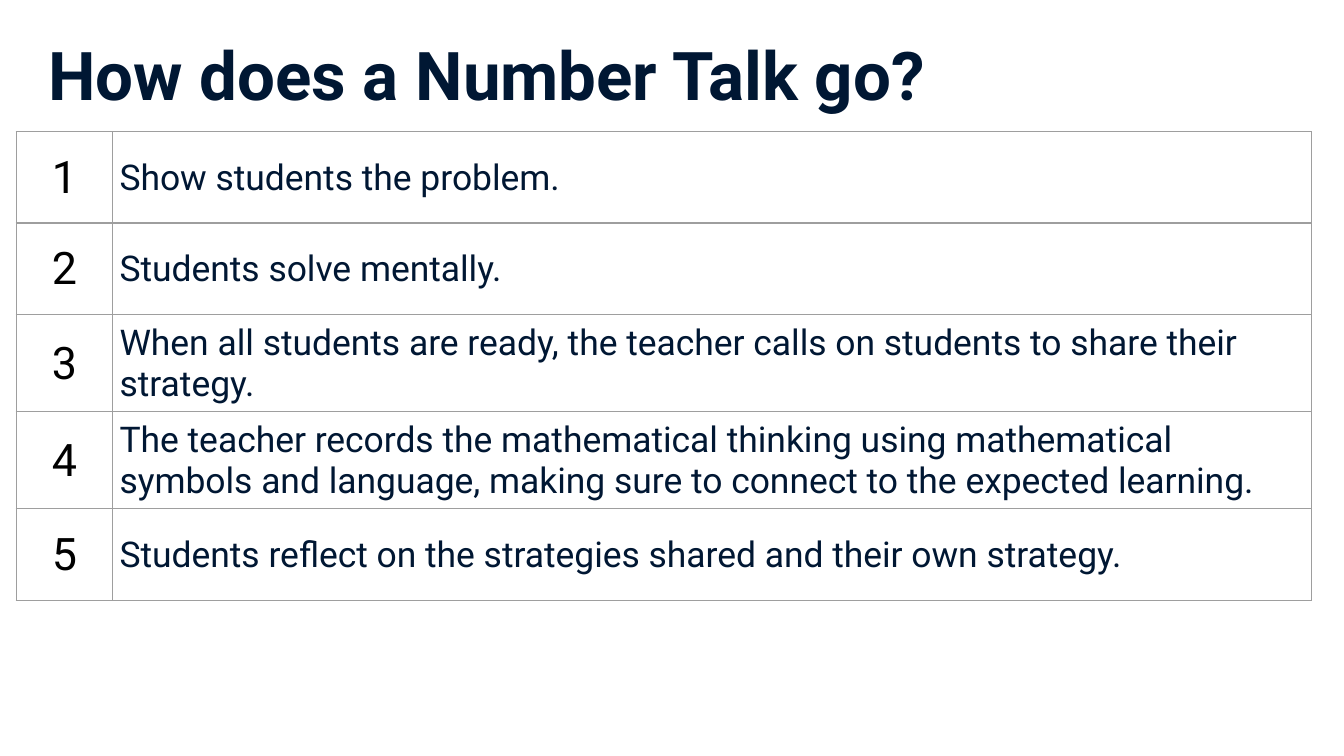
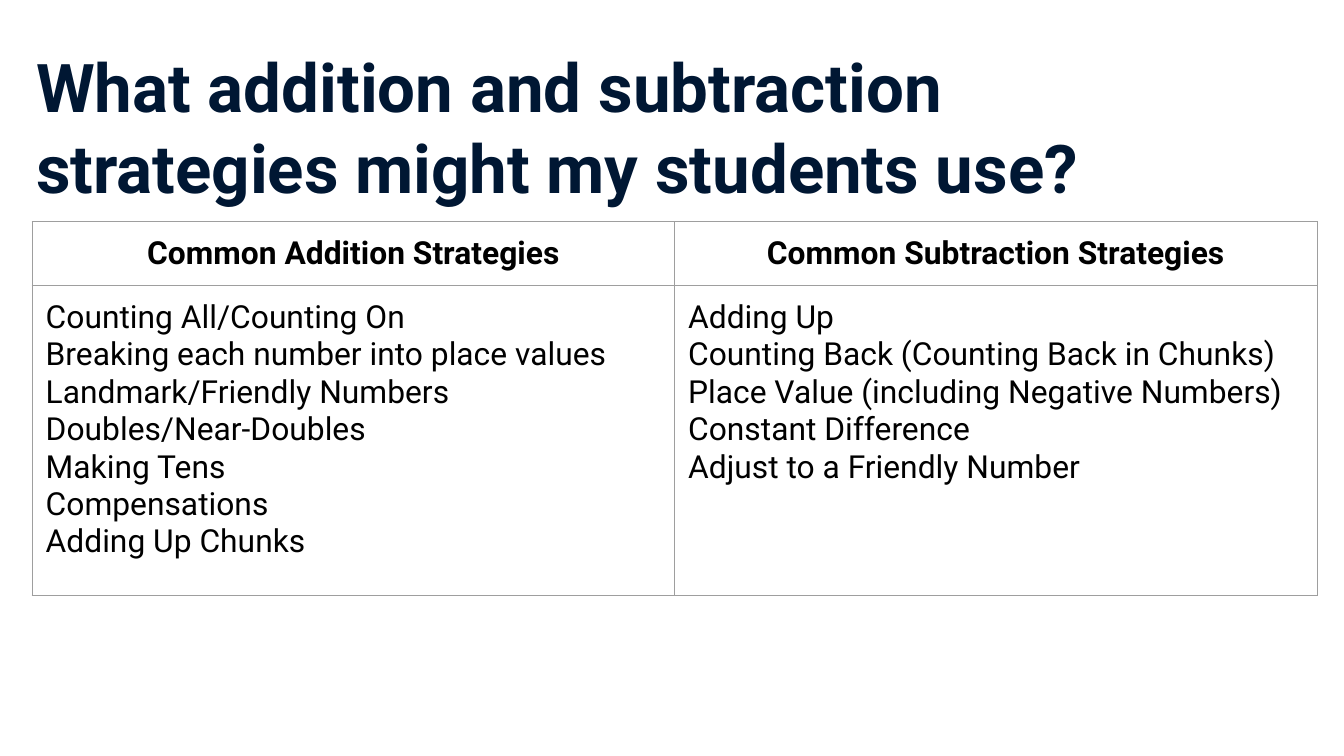
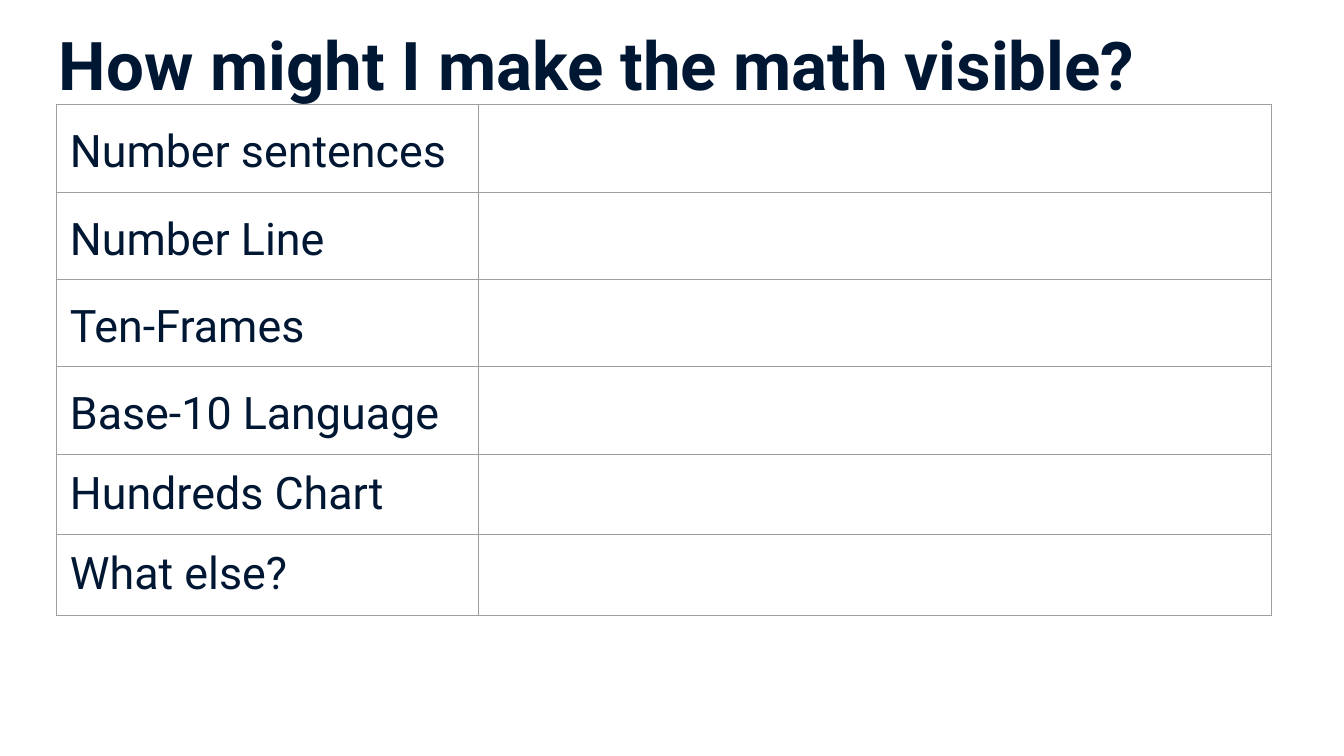
from lxml import etree
from pptx import Presentation
from pptx.dml.color import RGBColor
from pptx.enum.text import MSO_ANCHOR, PP_ALIGN
from pptx.oxml.ns import qn
from pptx.util import Inches, Pt

COLORS = {"navy": "001733", "black": "000000", "white": "FFFFFF", "rule": "9E9E9E"}
FONT = "Roboto"
LEFT, CENTER = PP_ALIGN.LEFT, PP_ALIGN.CENTER
TOP, MIDDLE = MSO_ANCHOR.TOP, MSO_ANCHOR.MIDDLE
EDGES = ("a:lnL", "a:lnR", "a:lnT", "a:lnB")

STEPS = [
    "Show students the problem.",
    "Students solve mentally.",
    "When all students are ready, the teacher calls on students to share their strategy.",
    "The teacher records the mathematical thinking using mathematical symbols and "
    "language, making sure to connect to the expected learning.",
    "Students reflect on the strategies shared and their own strategy.",
]
METHODS = {
    "Common Addition Strategies": [
        "Counting All/Counting On",
        "Breaking each number into place values",
        "Landmark/Friendly Numbers",
        "Doubles/Near-Doubles",
        "Making Tens",
        "Compensations",
        "Adding Up Chunks",
    ],
    "Common Subtraction Strategies": [
        "Adding Up",
        "Counting Back (Counting Back in Chunks)",
        "Place Value (including Negative Numbers)",
        "Constant Difference",
        "Adjust to a Friendly Number",
    ],
}
MODELS = ["Number sentences", "Number Line", "Ten-Frames", "Base-10 Language",
          "Hundreds Chart", "What else?"]
SPACED = 4  # leading models set with looser paragraphs


def paint(name):
    return RGBColor.from_string(COLORS[name])


def write(frame, lines, size, color, bold=False, align=LEFT, spacing=None, after=None):
    """Put one paragraph per line into a text frame."""
    for i, line in enumerate(lines):
        para = frame.add_paragraph() if i else frame.paragraphs[0]
        para.alignment = align
        if spacing:
            para.line_spacing = spacing
        if after:
            para.space_after = Pt(after)
        run = para.add_run()
        run.text = line
        font = run.font
        font.name, font.size, font.bold = FONT, Pt(size), bold
        font.color.rgb = paint(color)


def add_slide(deck):
    slide = deck.slides.add_slide(deck.slide_layouts[6])
    slide.background.fill.solid()
    slide.background.fill.fore_color.rgb = paint("white")
    return slide


def add_title(slide, left, top, text):
    box = slide.shapes.add_textbox(Inches(left), Inches(top), Inches(9.32), Inches(0.63))
    frame = box.text_frame
    frame.word_wrap = True
    frame.margin_left = frame.margin_top = frame.margin_bottom = Inches(0.1)
    frame.margin_right = Inches(0.15)
    write(frame, [text], 36, "navy", bold=True)


def add_rules(cell):
    """Draw a thin line on every edge of a cell."""
    props = cell._tc.get_or_add_tcPr()
    for i, edge in enumerate(EDGES):
        line = etree.Element(qn(edge), w=str(Pt(0.75)))
        fill = etree.SubElement(line, qn("a:solidFill"))
        etree.SubElement(fill, qn("a:srgbClr"), val=COLORS["rule"])
        props.insert(i, line)


def add_grid(slide, left, top, cols, rows):
    """Add a plain ruled table with the given column widths and row heights."""
    shape = slide.shapes.add_table(len(rows), len(cols), Inches(left), Inches(top),
                                   Inches(sum(cols)), Inches(sum(rows)))
    table = shape.table
    table.first_row = table.horz_banding = False
    for col, width in zip(table.columns, cols):
        col.width = Inches(width)
    for row, height in zip(table.rows, rows):
        row.height = Inches(height)
    for cell in table.iter_cells():
        cell.fill.background()
        add_rules(cell)
    return table


def fill_cell(cell, lines, size, color, pad=0.1, anchor=TOP, **style):
    """Write into a cell; the bottom margin leaves room for the rule."""
    cell.margin_left = cell.margin_right = cell.margin_top = Inches(pad)
    cell.margin_bottom = Inches(pad - 0.01)
    cell.vertical_anchor = anchor
    write(cell.text_frame, lines, size, color, **style)


def add_steps(deck):
    slide = add_slide(deck)
    add_title(slide, 0.26, 0.15, "How does a Number Talk go?")
    table = add_grid(slide, 0.12, 0.98, [0.72, 8.92], [0.68] * len(STEPS))
    for i, step in enumerate(STEPS):
        fill_cell(table.cell(i, 0), [str(i + 1)], 24, "black", anchor=MIDDLE, align=CENTER)
        fill_cell(table.cell(i, 1), [step], 19, "navy", pad=0.05, anchor=MIDDLE)


def add_methods(deck):
    slide = add_slide(deck)
    table = add_grid(slide, 0.24, 1.65, [4.78] * len(METHODS), [0.35, 2.31])
    for i, (head, items) in enumerate(METHODS.items()):
        fill_cell(table.cell(0, i), [head], 17, "black", bold=True, align=CENTER)
        fill_cell(table.cell(1, i), items, 17, "black")
    add_title(slide, 0.17, 0.24,
              "What addition and subtraction strategies might my students use?")


def add_models(deck):
    slide = add_slide(deck)
    add_title(slide, 0.34, 0.07, "How might I make the math visible?")
    table = add_grid(slide, 0.42, 0.78, [3.14, 5.9], [0.6] * len(MODELS))
    for i, model in enumerate(MODELS):
        style = {"spacing": 1.15, "after": 16} if i < SPACED else {}
        fill_cell(table.cell(i, 0), [model], 24, "navy", **style)


def main():
    deck = Presentation()
    deck.slide_width = Inches(10)
    deck.slide_height = deck.slide_width * 9 // 16
    add_steps(deck)
    add_methods(deck)
    add_models(deck)
    deck.save("out.pptx")


if __name__ == "__main__":
    main()
